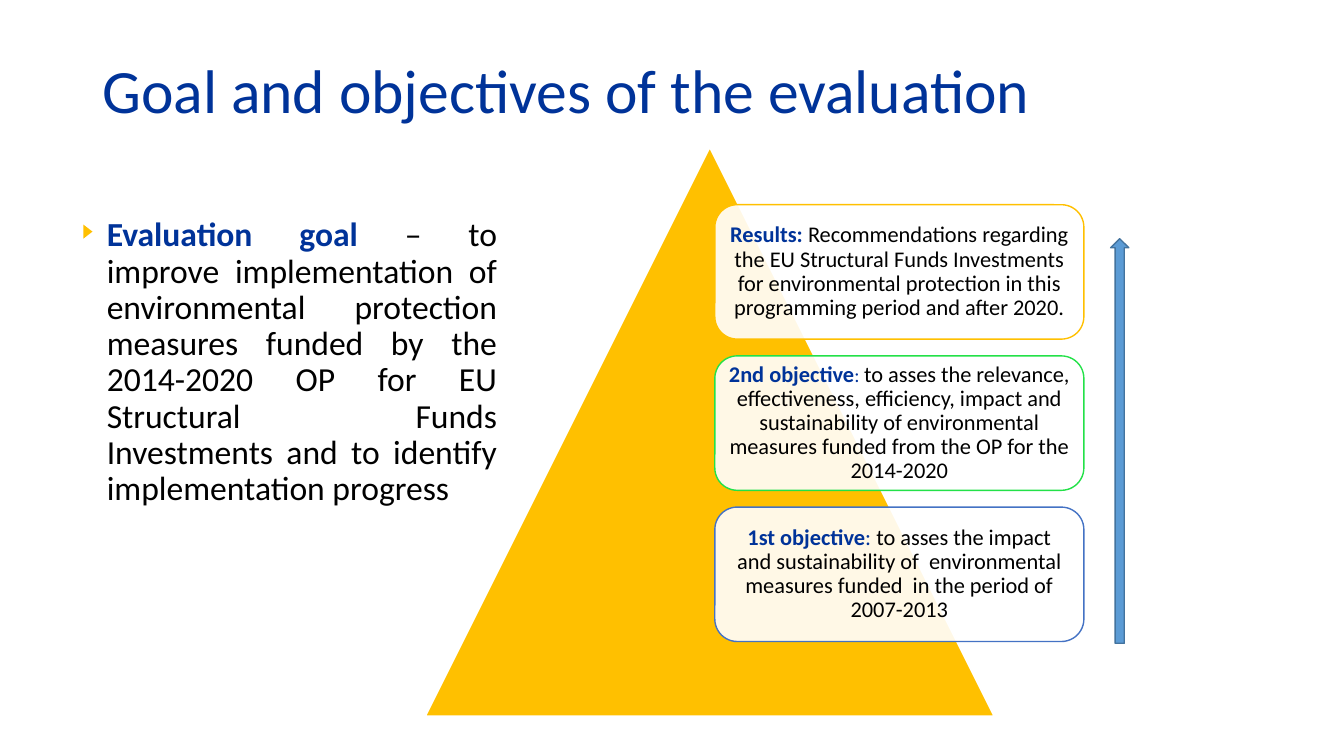
from pptx import Presentation
from pptx.dml.color import RGBColor
from pptx.enum.shapes import MSO_SHAPE
from pptx.enum.text import MSO_ANCHOR, PP_ALIGN
from pptx.oxml.ns import qn
from pptx.util import Pt
from lxml import etree

TRIANGLE = MSO_SHAPE.ISOSCELES_TRIANGLE
ROUNDED = MSO_SHAPE.ROUNDED_RECTANGLE
UP_ARROW = MSO_SHAPE.UP_ARROW
LEFT, CENTER, JUSTIFY = PP_ALIGN.LEFT, PP_ALIGN.CENTER, PP_ALIGN.JUSTIFY
TOP, MIDDLE = MSO_ANCHOR.TOP, MSO_ANCHOR.MIDDLE

COLORS = {
    "navy": "003399", "black": "000000", "white": "FFFFFF",
    "gold": "FFC000", "green": "23E148", "blue": "4472C4",
    "arrow": "5B9BD5", "arrow_edge": "43739E",
}

OBJECTIVES = [
    ("gold", [
        ("Results: ", 16, "navy", True),
        ("Recommendations regarding the EU Structural Funds Investments for "
         "environmental protection in this programming period and after 2020.",
         16, "black", False)]),
    ("green", [
        ("2nd objective", 16, "navy", True),
        (": ", 14, "navy", False),
        ("to asses the relevance, effectiveness, efficiency, impact and "
         "sustainability of environmental measures funded from the OP for the "
         "2014-2020", 16, "black", False)]),
    ("blue", [
        ("1st objective", 16, "navy", True),
        (": ", 16, "navy", False),
        ("to asses the impact and sustainability of  environmental measures "
         "funded  in the period of 2007-2013", 16, "black", False)]),
]


class SlideBuilder:
    """Adds styled elements to one slide, with lengths in points."""

    def __init__(self, slide, font):
        self.slide = slide
        self.font = font

    def color(self, name):
        return RGBColor.from_string(COLORS[name])

    def shape(self, kind, box, fill, line=None, alpha=None, rotation=0):
        s = self.slide.shapes.add_shape(kind, *map(Pt, box))
        s.shadow.inherit = False
        s.rotation = rotation
        s.fill.solid()
        s.fill.fore_color.rgb = self.color(fill)
        if alpha:
            clr = s.element.spPr.find(qn("a:solidFill"))[0]
            etree.SubElement(clr, qn("a:alpha"), val=str(alpha * 1000))
        if line:
            s.line.color.rgb = self.color(line)
            s.line.width = Pt(1)
        else:
            s.line.fill.background()
        return s

    def fill_text(self, s, runs, align, anchor, inset=(7.2, 3.6)):
        tf = s.text_frame
        x, y = map(Pt, inset)
        frame = {"word_wrap": True, "vertical_anchor": anchor, "margin_left": x,
                 "margin_right": x, "margin_top": y, "margin_bottom": y}
        for name, value in frame.items():
            setattr(tf, name, value)
        p = tf.paragraphs[0]
        p.alignment = align
        p.line_spacing = 0.9
        for text, size, color, bold in runs:
            r = p.add_run()
            r.text = text
            style = {"name": self.font, "size": Pt(size), "bold": bold}
            for name, value in style.items():
                setattr(r.font, name, value)
            r.font.color.rgb = self.color(color)

    def text(self, box, runs, align, anchor):
        s = self.slide.shapes.add_textbox(*map(Pt, box))
        self.fill_text(s, runs, align, anchor)

    def card(self, box, line, runs):
        s = self.shape(ROUNDED, box, "white", line, alpha=90)
        self.fill_text(s, runs, CENTER, MIDDLE, inset=(5, 5))


def main():
    prs = Presentation()
    prs.slide_width, prs.slide_height = Pt(960), Pt(540)
    b = SlideBuilder(prs.slides.add_slide(prs.slide_layouts[6]), "Calibri")

    b.text((66, 28.75, 828, 76.25),
           [("Goal and objectives of the evaluation", 44, "navy", False)],
           LEFT, MIDDLE)

    b.shape(TRIANGLE, (304, 105.4, 406, 406), "gold", "white")
    for i, (line, runs) in enumerate(OBJECTIVES):
        b.card((510.6, 146.2 + 108 * i, 263.6, 96), line, runs)
    b.shape(UP_ARROW, (793.3, 170.5, 13, 289), "arrow", "arrow_edge")

    b.text((69.2, 152, 293, 245), [
        ("Evaluation goal ", 24, "navy", True),
        ("– to improve implementation of environmental protection measures "
         "funded by the 2014-2020 OP for EU Structural Funds Investments and "
         "to identify implementation progress", 24, "black", False),
    ], JUSTIFY, TOP)
    b.shape(TRIANGLE, (57.8, 162.2, 10, 6.5), "gold", rotation=90)

    prs.save("out.pptx")


if __name__ == "__main__":
    main()
